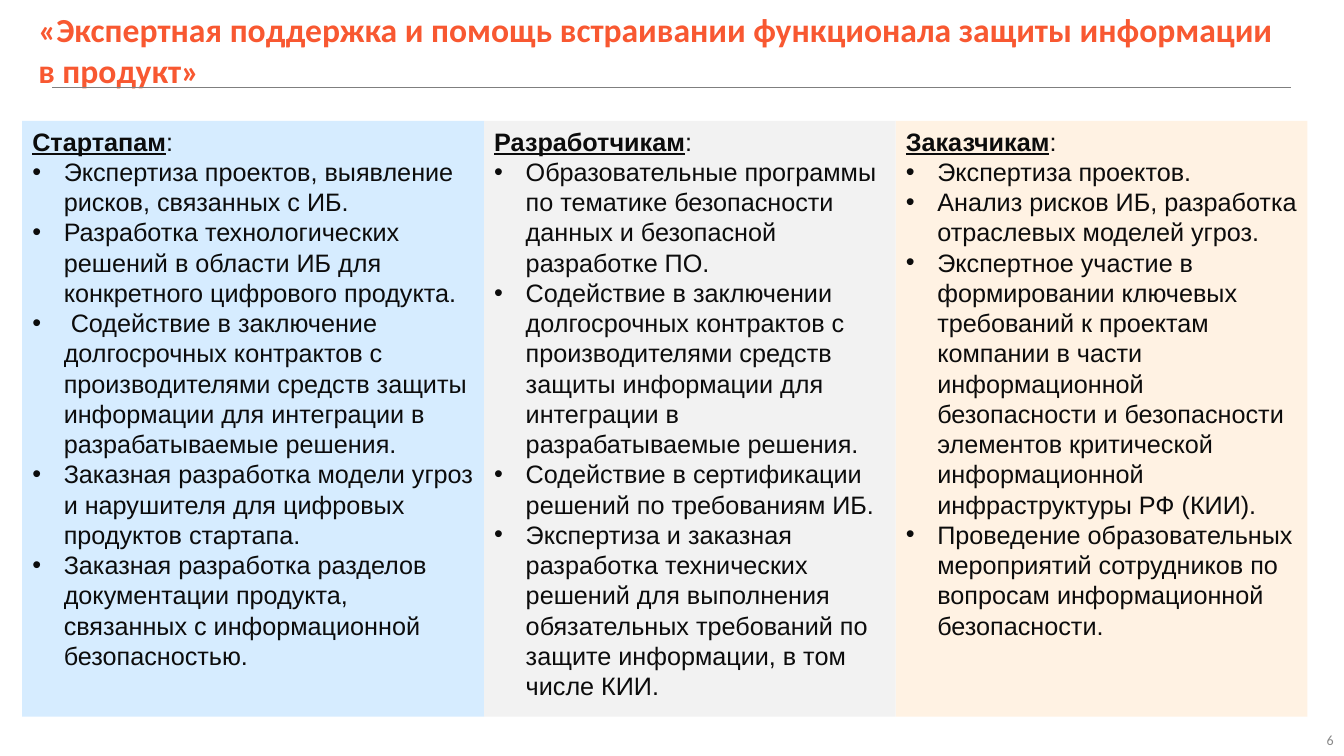
from dataclasses import dataclass

from lxml.etree import SubElement
from pptx import Presentation
from pptx.dml.color import RGBColor
from pptx.enum.shapes import MSO_CONNECTOR
from pptx.enum.text import MSO_ANCHOR, MSO_AUTO_SIZE, PP_ALIGN
from pptx.oxml.ns import qn
from pptx.util import Pt

ORANGE = RGBColor(0xF8, 0x58, 0x31)
INK = RGBColor(0x0C, 0x0C, 0x0C)
GRAY = RGBColor(0x88, 0x88, 0x88)
RULE_GRAY = RGBColor(0x7F, 0x7F, 0x7F)
BLUE_TINT = RGBColor(0xD6, 0xEC, 0xFF)
GRAY_TINT = RGBColor(0xF2, 0xF2, 0xF2)
ORANGE_TINT = RGBColor(0xFF, 0xF2, 0xE3)

COLUMNS_LEFT, COLUMNS_TOP, COLUMNS_HEIGHT = 15.84, 86.4, 425.52
BULLET_INDENT = 22.5


@dataclass
class Column:
    heading: str
    width: float
    fill: RGBColor
    items: list[str]


COLUMNS = [
    Column("Стартапам", 330, BLUE_TINT, [
        "Экспертиза проектов, выявление рисков, связанных с ИБ.",
        "Разработка технологических решений в области ИБ для конкретного цифрового продукта.",
        " Содействие в заключение долгосрочных контрактов с производителями средств защиты "
        "информации для интеграции в разрабатываемые решения.",
        "Заказная разработка модели угроз и нарушителя для цифровых продуктов стартапа.",
        "Заказная разработка разделов документации продукта, связанных с информационной "
        "безопасностью.",
    ]),
    Column("Разработчикам", 294, GRAY_TINT, [
        "Образовательные программы по тематике безопасности данных и безопасной разработке ПО.",
        "Содействие в заключении долгосрочных контрактов с производителями средств защиты "
        "информации для интеграции в разрабатываемые решения.",
        "Содействие в сертификации решений по требованиям ИБ.",
        "Экспертиза и заказная разработка технических решений для выполнения обязательных "
        "требований по защите информации, в том числе КИИ.",
    ]),
    Column("Заказчикам", 294, ORANGE_TINT, [
        "Экспертиза проектов.",
        "Анализ рисков ИБ, разработка отраслевых моделей угроз.",
        "Экспертное участие в формировании ключевых требований к проектам компании в части "
        "информационной безопасности и безопасности элементов критической информационной "
        "инфраструктуры РФ (КИИ).",
        "Проведение образовательных мероприятий сотрудников по вопросам информационной "
        "безопасности.",
    ]),
]


def add_text(para, text: str, *, size: float = 18, font: str = "Arial",
             color: RGBColor = INK, bold: bool = False, underline: bool = False) -> None:
    span = para.add_run()
    span.text = text
    span.font.size = Pt(size)
    span.font.name = font
    span.font.color.rgb = color
    span.font.bold = bold
    span.font.underline = underline


def format_paragraph(para, *, align: PP_ALIGN = PP_ALIGN.LEFT, bullet: bool = False) -> None:
    para.alignment = align
    para.line_spacing = 1.0
    para.space_before = para.space_after = Pt(0)
    properties = para._p.get_or_add_pPr()
    indent = Pt(BULLET_INDENT) if bullet else 0
    properties.set("marL", str(indent))
    properties.set("indent", str(-indent))
    if bullet:
        SubElement(properties, qn("a:buFont")).set("typeface", "Arial")
        SubElement(properties, qn("a:buChar")).set("char", "•")
    else:
        SubElement(properties, qn("a:buNone"))


def place(box, left: float, top: float, width: float, height: float,
          anchor: MSO_ANCHOR = MSO_ANCHOR.TOP):
    box.left, box.top, box.width, box.height = Pt(left), Pt(top), Pt(width), Pt(height)
    frame = box.text_frame
    frame.word_wrap = True
    frame.auto_size = MSO_AUTO_SIZE.NONE
    frame.vertical_anchor = anchor
    frame.margin_left = frame.margin_right = Pt(7.2)
    frame.margin_top = frame.margin_bottom = Pt(3.6)
    return frame


def add_title(page) -> None:
    para = place(page.shapes.title, 20.16, 2.88, 902.16, 36).paragraphs[0]
    format_paragraph(para)
    add_text(para, "«Экспертная поддержка и помощь встраивании функционала защиты "
             "информации в продукт»", size=24, font="Calibri", color=ORANGE, bold=True)


def add_rule(page) -> None:
    rule = page.shapes.add_connector(
        MSO_CONNECTOR.STRAIGHT, Pt(37.44), Pt(62.64), Pt(922.32), Pt(62.64))
    rule.line.color.rgb = RULE_GRAY
    rule.line.width = Pt(0.75)
    SubElement(rule._element.spPr, qn("a:effectLst"))


def fill_column(box, column: Column, left: float) -> None:
    frame = place(box, left, COLUMNS_TOP, column.width, COLUMNS_HEIGHT)
    box.fill.solid()
    box.fill.fore_color.rgb = column.fill
    heading = frame.paragraphs[0]
    format_paragraph(heading)
    add_text(heading, column.heading, bold=True, underline=True)
    add_text(heading, ":")
    for item in column.items:
        para = frame.add_paragraph()
        format_paragraph(para, bullet=True)
        add_text(para, item)


def add_page_number(page) -> None:
    box = page.shapes.add_textbox(0, 0, 0, 0)
    para = place(box, 743.76, 516.96, 216, 23.04, MSO_ANCHOR.MIDDLE).paragraphs[0]
    format_paragraph(para, align=PP_ALIGN.RIGHT)
    add_text(para, "6", size=10, font="Calibri", color=GRAY)


def main() -> None:
    deck = Presentation()
    deck.slide_width, deck.slide_height = Pt(960), Pt(540)
    page = deck.slides.add_slide(deck.slide_layouts.get_by_name("Comparison"))
    add_title(page)
    add_rule(page)
    *bodies, spare = list(page.placeholders)[1:]
    spare._element.getparent().remove(spare._element)
    left = COLUMNS_LEFT
    for box, column in zip(bodies, COLUMNS):
        fill_column(box, column, left)
        left += column.width
    add_page_number(page)
    deck.save("out.pptx")


if __name__ == "__main__":
    main()
